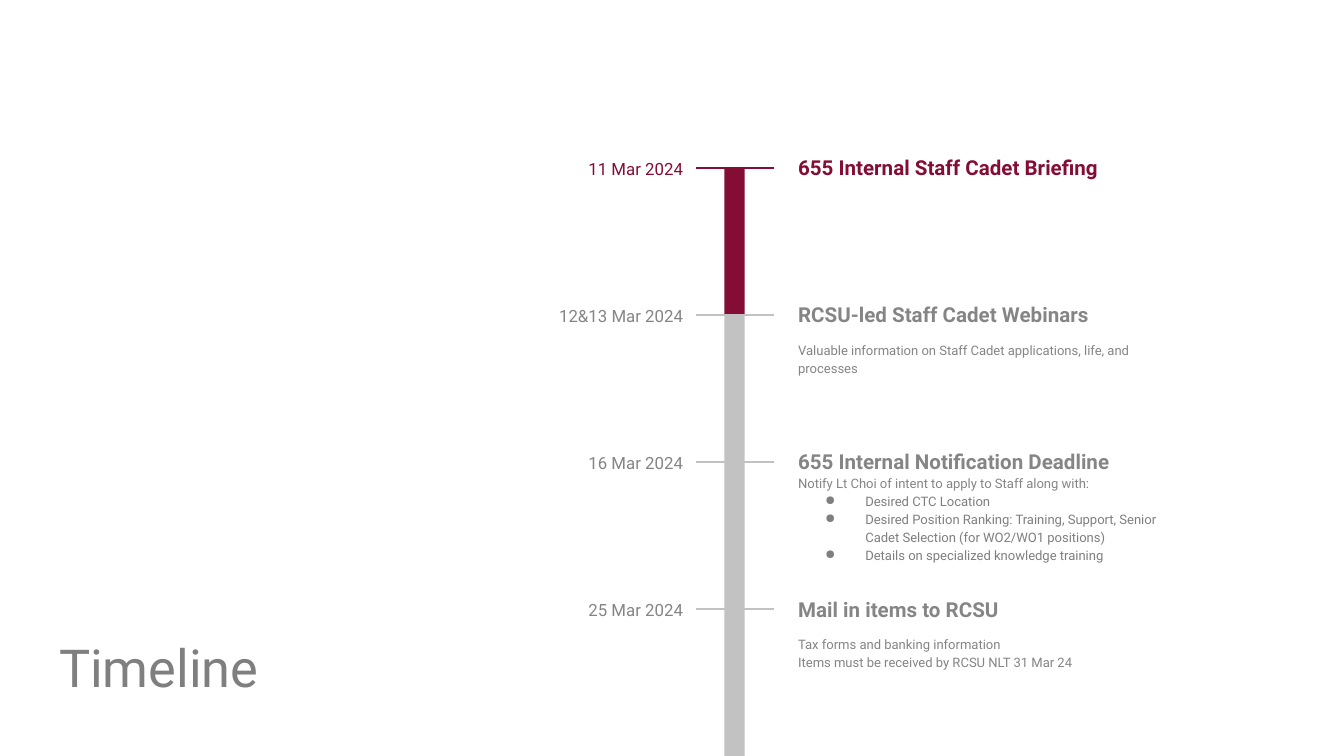
"""Build the staff cadet timeline slide."""
from copy import deepcopy
from dataclasses import dataclass

from lxml.etree import SubElement
from pptx import Presentation
from pptx.dml.color import RGBColor
from pptx.enum.shapes import MSO_CONNECTOR as Connector, MSO_SHAPE as Shape
from pptx.enum.text import MSO_ANCHOR as Anchor, MSO_AUTO_SIZE as AutoSize, PP_ALIGN as Align
from pptx.oxml.ns import qn
from pptx.util import Inches, Pt


@dataclass(frozen=True)
class Theme:
    font: str = "Roboto"
    accent: str = "840D35"
    bar: str = "C2C2C2"
    muted: str = "858585"
    strong: str = "7F7F7F"
    title_size: int = 28
    heading_size: int = 11
    date_size: int = 9
    detail_size: int = 7
    spacing: float = 1.15


WIDTH, HEIGHT = 10, 10 * 9 / 16
FIRST_TOP = 1.25
TICK_LEFT, TICK_RIGHT = 5.18, 5.76
BAR_LEFT, BAR_WIDTH = 5.39, 0.15
TEXT_LEFT, TEXT_WIDTH = 5.84, 2.98
DATE_WIDTH = 1.27

MILESTONES = [
    {"date": "11 Mar 2024", "heading": "655 Internal Staff Cadet Briefing"},
    {"date": "12&13 Mar 2024", "heading": "RCSU-led Staff Cadet Webinars",
     "detail": "Valuable information on Staff Cadet applications, life, and processes"},
    {"date": "16 Mar 2024", "heading": "655 Internal Notification Deadline",
     "detail": "Notify Lt Choi of intent to apply to Staff along with:",
     "bullets": ["Desired CTC Location",
                 "Desired Position Ranking: Training, Support, Senior Cadet Selection (for WO2/WO1 positions)",
                 "Details on specialized knowledge training"]},
    {"date": "25 Mar 2024", "heading": "Mail in items to RCSU",
     "detail": "Tax forms and banking information\vItems must be received by RCSU NLT 31 Mar 24"},
]


def apply(target, values):
    for name, value in values.items():
        setattr(target, name, value)


class TimelineSlide:
    """Holds the style and the slide, and adds each kind of element."""

    def __init__(self, slide, theme):
        self.slide = slide
        self.theme = theme
        self.shapes = slide.shapes

    def start_group(self):
        self.shapes = self.slide.shapes.add_group_shape().shapes

    def frame(self, shape, anchor=Anchor.TOP):
        margins = {f"margin_{side}": Inches(0.1) for side in ("left", "top", "right", "bottom")}
        apply(shape.text_frame, {"word_wrap": True, "auto_size": AutoSize.NONE,
                                 "vertical_anchor": anchor, **margins})
        return shape.text_frame

    def fill_paragraph(self, paragraph, text, size, color, bold=False, **layout):
        paragraph.text = text
        apply(paragraph, layout)
        for run in paragraph.runs:
            apply(run.font, {"name": self.theme.font, "size": Pt(size), "bold": bold})
            run.font.color.rgb = RGBColor.from_string(color)
        for line_break in paragraph._p.findall(qn("a:br")):
            line_break.insert(0, deepcopy(paragraph.runs[0]._r.rPr))

    def title(self, text, left, top, width, height):
        title = self.slide.shapes.title
        apply(title, {"left": Inches(left), "top": Inches(top),
                      "width": Inches(width), "height": Inches(height)})
        self.fill_paragraph(self.frame(title, Anchor.MIDDLE).paragraphs[0], text,
                            self.theme.title_size, self.theme.strong, alignment=Align.LEFT)

    def bar(self, top, height, color):
        bar = self.shapes.add_shape(Shape.RECTANGLE, Inches(BAR_LEFT), Inches(top),
                                    Inches(BAR_WIDTH), Inches(height))
        bar.shadow.inherit = False
        bar.fill.solid()
        bar.fill.fore_color.rgb = RGBColor.from_string(color)
        bar.line.fill.background()

    def tick(self, top, color):
        tick = self.shapes.add_connector(Connector.STRAIGHT, Inches(TICK_RIGHT), Inches(top),
                                         Inches(TICK_LEFT), Inches(top))
        tick.line.width = Pt(0.75)
        tick.line.color.rgb = RGBColor.from_string(color)
        SubElement(tick._element.spPr, qn("a:effectLst"))

    def text(self, text, left, top, width, height, size, color, **layout):
        box = self.shapes.add_textbox(Inches(left), Inches(top), Inches(width), Inches(height))
        frame = self.frame(box)
        self.fill_paragraph(frame.paragraphs[0], text, size, color, **layout)
        return frame

    def bullet(self, frame, text):
        theme = self.theme
        paragraph = frame.add_paragraph()
        self.fill_paragraph(paragraph, text, theme.detail_size, theme.strong,
                            line_spacing=theme.spacing)
        properties = paragraph._p.get_or_add_pPr()
        properties.set("marL", str(Inches(0.5)))
        properties.set("indent", str(Inches(-0.3)))
        color = SubElement(properties, qn("a:buClr"))
        SubElement(color, qn("a:srgbClr"), val=theme.strong)
        SubElement(properties, qn("a:buChar"), char="●")

    def milestone(self, top, height, date, heading, detail="", bullets=(), current=False):
        theme = self.theme
        bar_color, text_color = (theme.accent, theme.accent) if current else (theme.bar, theme.muted)
        self.start_group()
        self.bar(top, height, bar_color)
        self.tick(top, bar_color)
        self.text(heading, TEXT_LEFT, top - 0.22, TEXT_WIDTH, 0.3, theme.heading_size,
                  text_color, bold=True, line_spacing=theme.spacing)
        if bullets:
            frame = self.text(detail, TEXT_LEFT, top, TEXT_WIDTH, 0.79,
                              theme.detail_size, text_color)
            for item in bullets:
                self.bullet(frame, item)
        elif detail:
            self.text(detail, TEXT_LEFT, top + 0.09, TEXT_WIDTH, 0.45, theme.detail_size,
                      text_color, line_spacing=theme.spacing, space_after=Pt(16))
        self.text(date, TICK_LEFT - DATE_WIDTH, top - 0.19, DATE_WIDTH, 0.38, theme.date_size,
                  text_color, line_spacing=theme.spacing, alignment=Align.RIGHT)


def main():
    presentation = Presentation()
    apply(presentation, {"slide_width": Inches(WIDTH), "slide_height": Inches(HEIGHT)})
    slide = presentation.slides.add_slide(presentation.slide_layouts[5])
    timeline = TimelineSlide(slide, Theme())
    timeline.title("Timeline", 0.34, 4.63, 6.56, 0.66)
    step = (HEIGHT - FIRST_TOP) / len(MILESTONES)
    for index, milestone in enumerate(MILESTONES):
        timeline.milestone(FIRST_TOP + index * step, step, current=index == 0, **milestone)
    presentation.save("out.pptx")


if __name__ == "__main__":
    main()
